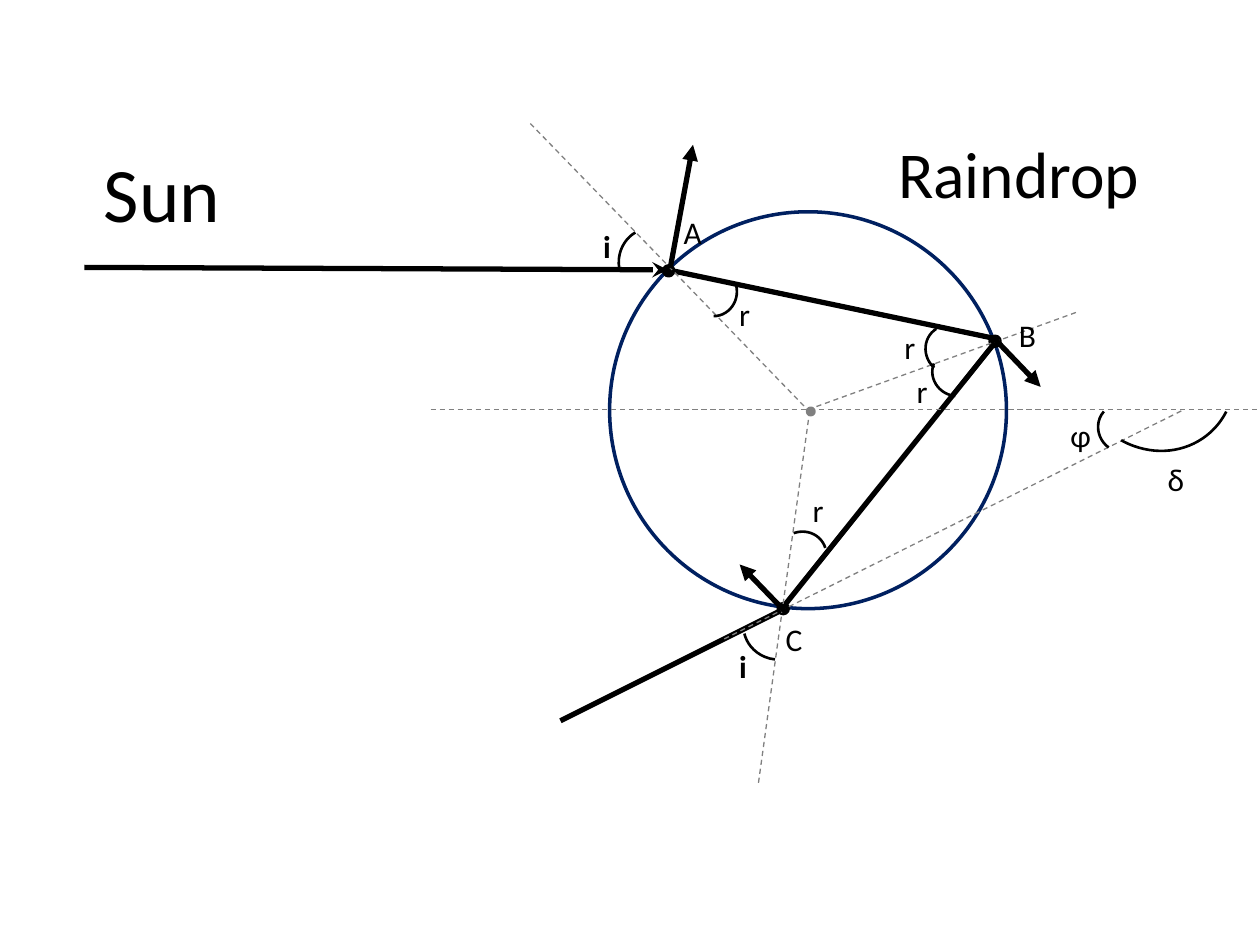
from lxml import etree
from pptx import Presentation
from pptx.dml.color import RGBColor
from pptx.enum.dml import MSO_LINE
from pptx.enum.shapes import MSO_CONNECTOR, MSO_SHAPE
from pptx.enum.text import MSO_ANCHOR, PP_ALIGN
from pptx.oxml.ns import qn
from pptx.util import Cm, Pt

STRAIGHT = MSO_CONNECTOR.STRAIGHT
ELLIPSE = MSO_SHAPE.OVAL
ARC = MSO_SHAPE.ARC
DASH = MSO_LINE.DASH
MIDDLE = MSO_ANCHOR.MIDDLE
TOP = MSO_ANCHOR.TOP
CENTER = PP_ALIGN.CENTER
LEFT = PP_ALIGN.LEFT

BLACK = "000000"
GRAY = "808080"
NAVY = "002060"
FONT = "Calibri"

DROP_BOX = (12.29, 4.27, 8, 8)
SUN_BOX = (0.41, 2.79, 5.72, 2.16)
RAINDROP_BOX = (17.68, 2.39, 5.72, 2.16)

DROP_CENTER = (3.99, 3.99)
ENTRY = (1.17, 1.17)
EXIT = (3.43, 8.05)

SMALL_ARC = (0.99, 0.94)
MEDIUM_ARC = (1.37, 1.3)
LARGE_ARC = (3.07, 3.3)


def color(hex_string):
    return RGBColor.from_string(hex_string)


def add_line(slide, box, start, end, line_color=BLACK, width=3, dash=None, arrow=None):
    left, top = box[:2]
    connector = slide.shapes.add_connector(
        STRAIGHT,
        Cm(left + start[0]), Cm(top + start[1]),
        Cm(left + end[0]), Cm(top + end[1]),
    )
    connector.line.color.rgb = color(line_color)
    connector.line.width = Pt(width)
    if dash:
        connector.line.dash_style = dash
    if arrow:
        line_end = etree.SubElement(connector.line._get_or_add_ln(), qn("a:tailEnd"))
        line_end.set("type", arrow)
    etree.SubElement(connector._element.spPr, qn("a:effectLst"))


def add_outline(slide, box, kind, position, size, line_color, width, fill=None):
    shape = slide.shapes.add_shape(
        kind,
        Cm(box[0] + position[0]), Cm(box[1] + position[1]),
        Cm(size[0]), Cm(size[1]),
    )
    shape.shadow.inherit = False
    if fill:
        shape.fill.solid()
        shape.fill.fore_color.rgb = color(fill)
    else:
        shape.fill.background()
    shape.line.color.rgb = color(line_color)
    shape.line.width = Pt(width)
    return shape


def add_text(slide, box, text, size, bold=False, alignment=LEFT, anchor=TOP):
    shape = slide.shapes.add_textbox(*(Cm(length) for length in box))
    frame = shape.text_frame
    frame.word_wrap = True
    frame.vertical_anchor = anchor
    paragraph = frame.paragraphs[0]
    paragraph.alignment = alignment
    run = paragraph.add_run()
    run.text = text
    run.font.name = FONT
    run.font.size = Pt(size)
    run.font.bold = bold
    run.font.color.rgb = color(BLACK)


def add_heading(slide, box, text, size):
    add_text(slide, box, text, size, alignment=CENTER, anchor=MIDDLE)


def add_light_path(slide, box):
    add_line(slide, box, (-10.59, 1.12), ENTRY, arrow="stealth")
    add_line(slide, box, ENTRY, (7.7, 2.54))
    add_line(slide, box, (7.82, 2.57), EXIT)
    add_line(slide, box, EXIT, (-0.99, 10.26))
    for position in [(1.09, 1.09), (7.67, 2.51), (3.4, 7.9)]:
        add_outline(slide, box, ELLIPSE, position, (0.2, 0.2), BLACK, 2, BLACK)


def add_construction_lines(slide, box):
    lines = [
        ((-3.61, 3.99), (13.11, 3.99)),
        ((-1.6, -1.78), DROP_CENTER),
        ((9.4, 2.03), DROP_CENTER),
        ((3, 11.51), (4.04, 3.96)),
        ((2.31, 8.61), (11.53, 4.01)),
    ]
    for start, end in lines:
        add_line(slide, box, start, end, GRAY, 0.75, DASH)
    add_outline(slide, box, ELLIPSE, (3.99, 3.96), (0.13, 0.13), GRAY, 2, GRAY)


def add_angle_arcs(slide, box):
    arcs = [
        ((1.6, 1.14), SMALL_ARC, 90, 150.86, 0),
        ((0.15, 0.36), MEDIUM_ARC, 275.6, 150.86, 195.88),
        ((9.83, 3.89), SMALL_ARC, 232.9, 150.86, 209.89),
        ((3.38, 6.45), SMALL_ARC, 343.1, 159.94, 0),
        ((6.5, 2.77), SMALL_ARC, 201.9, 150.86, 0),
        ((6.35, 2.31), SMALL_ARC, 238.3, 150.86, 0),
        ((9.47, 1.57), LARGE_ARC, 138.1, 150.86, 203.12),
        ((2.69, 7.72), MEDIUM_ARC, 202.3, 150.86, 195.88),
    ]
    for position, size, rotation, start, end in arcs:
        arc = add_outline(slide, box, ARC, position, size, BLACK, 1.5)
        arc.adjustments[0] = start
        arc.adjustments[1] = end
        arc.rotation = rotation


def add_labels(slide, box):
    labels = [
        ("A", 1.24, -0.1, 1.19),
        ("B", 8, 1.98, 1.19),
        ("C", 3.3, 8.1, 1.19),
        ("r", 2.36, 1.55, 1.19),
        ("r", 5.69, 2.21, 0.51),
        ("r", 5.94, 3.1, 0.61),
        ("r", 3.84, 5.51, 1.19),
        ("i", -0.38, 0.18, 0.71),
        ("i", 2.36, 8.64, 0.61),
        ("φ", 9.04, 3.99, 0.61),
        ("δ", 11, 4.88, 1.19),
    ]
    for text, x, y, width in labels:
        label_box = (box[0] + x, box[1] + y, width, 1.02)
        add_text(slide, label_box, text, 18, bold=text == "i")


def add_side_rays(slide, box):
    rays = [
        ((1.22, 1.14), (1.68, -1.35)),
        ((7.77, 2.57), (8.69, 3.53)),
        ((3.53, 8.05), (2.62, 7.11)),
    ]
    for start, end in rays:
        add_line(slide, box, start, end, arrow="triangle")


def add_raindrop_diagram(slide, box):
    add_outline(slide, box, ELLIPSE, (0, 0), box[2:], NAVY, 2)
    add_light_path(slide, box)
    add_construction_lines(slide, box)
    add_angle_arcs(slide, box)
    add_labels(slide, box)
    add_side_rays(slide, box)


def main():
    presentation = Presentation()
    presentation.slide_width = Cm(25.4)
    presentation.slide_height = Cm(19.05)
    slide = presentation.slides.add_slide(presentation.slide_layouts[6])
    add_heading(slide, SUN_BOX, "Sun", 44)
    add_raindrop_diagram(slide, DROP_BOX)
    add_heading(slide, RAINDROP_BOX, "Raindrop", 37.4)
    presentation.save("out.pptx")


if __name__ == "__main__":
    main()
